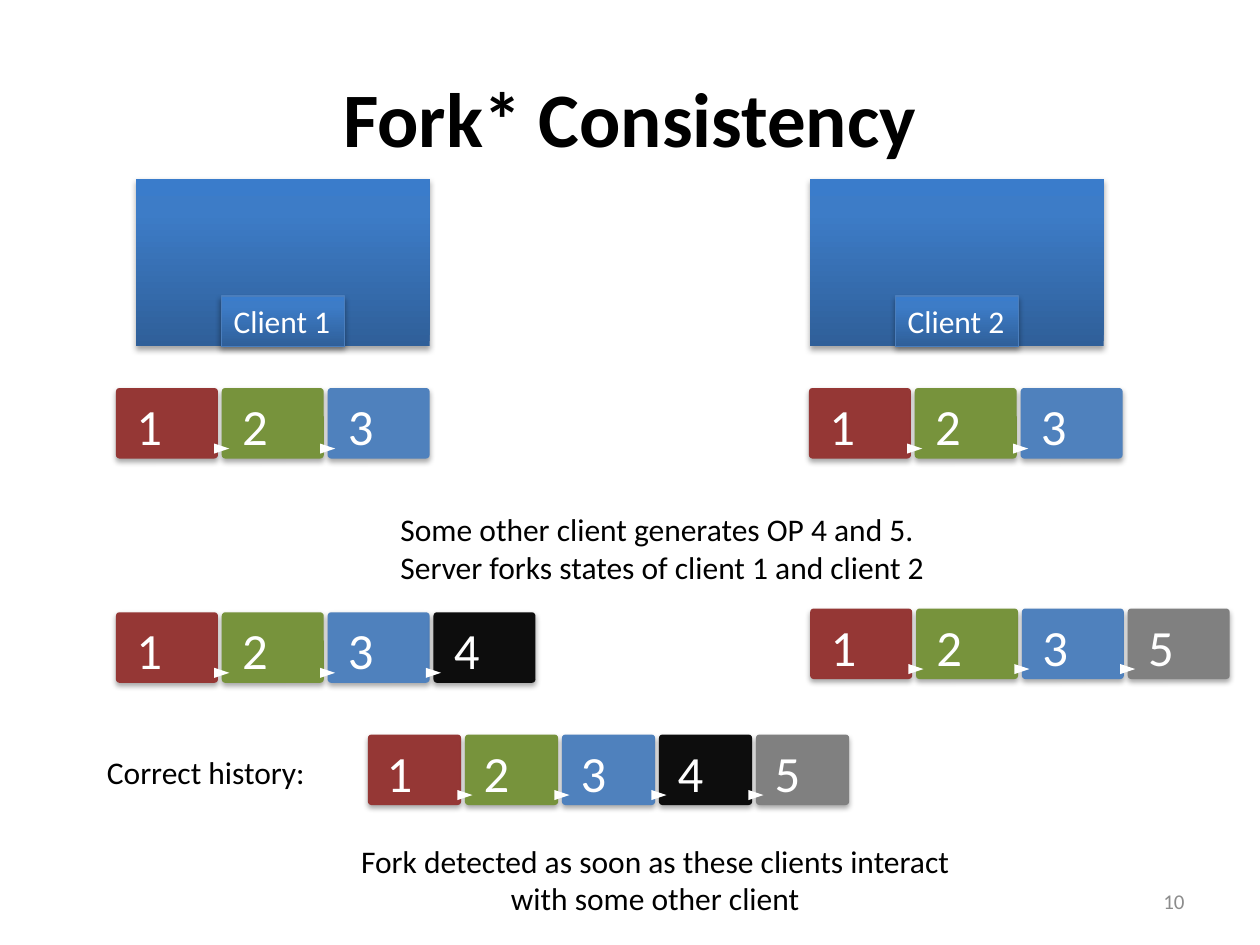
"""Build the Fork* Consistency slide with its operation histories."""
from copy import deepcopy
from dataclasses import dataclass

from lxml import etree
from pptx import Presentation
from pptx import util as u
from pptx.dml.color import RGBColor
from pptx.enum import shapes, text
from pptx.oxml.ns import qn


@dataclass(frozen=True)
class Theme:
    font: str = "Calibri"
    black: str = "000000"
    white: str = "FFFFFF"
    muted: str = "8C8C8C"
    outline: str = "4B7EBC"
    gradient: tuple = ((0, "2F5F99"), (0.8, "3D7CC7"), (1, "3A7CCB"))
    title_size: int = 44
    tile_size: int = 29
    body_size: int = 18
    number_size: int = 12


THEME = Theme()
LEFT, CENTER, RIGHT = text.PP_ALIGN.LEFT, text.PP_ALIGN.CENTER, text.PP_ALIGN.RIGHT
TITLE = "Fork* Consistency"
CLIENTS = [("Client 1", 1.08), ("Client 2", 6.43)]
OPERATION_COLORS = {"1": "953735", "2": "77933C", "3": "4F81BD", "4": "0D0D0D", "5": "808080"}
HISTORIES = [
    ("123", 0.92, 3.08, 0.81),
    ("123", 6.42, 3.08, 0.81),
    ("1234", 0.92, 4.86, 0.81),
    ("1235", 6.43, 4.83, 0.81),
    ("12345", 2.92, 5.83, 0.74),
]
NOTES = [
    (["Some other client generates OP 4 and 5.",
      "Server forks states of client 1 and client 2"], (3.08, 4, 4.41, 0.71), LEFT),
    (["Fork detected as soon as these clients interact",
      "with some other client"], (2.74, 6.63, 4.92, 0.71), CENTER),
    (["Correct history:"], (0.75, 5.93, 1.79, 0.4), LEFT),
]
SLIDE_NUMBER = "10"
CLIENT_TOP, CLIENT_WIDTH, CLIENT_HEIGHT = 1.42, 2.33, 1.33
LABEL_WIDTH, LABEL_HEIGHT = 0.98, 0.4
TILE_HEIGHT, TILE_GAP = 0.56, 0.03
ARROW_WIDTH, ARROW_HEIGHT = 0.08, 0.12


def inches(box):
    return [u.Inches(length) for length in box]


def write(shape, lines, size, color, align=LEFT, bold=False):
    frame = shape.text_frame
    for index, line in enumerate(lines):
        paragraph = frame.add_paragraph() if index else frame.paragraphs[0]
        paragraph.alignment = align
        run = paragraph.add_run()
        run.text = line
        run.font.name = THEME.font
        run.font.size = u.Pt(size)
        run.font.bold = bold
        run.font.color.rgb = RGBColor.from_string(color)
    return frame


def add_plain_shape(parent, kind, box, color=None):
    shape = parent.add_shape(kind, *inches(box))
    shape.line.fill.background()
    shape.shadow.inherit = False
    if color:
        shape.fill.solid()
        shape.fill.fore_color.rgb = RGBColor.from_string(color)
    return shape


def add_shadow(shape):
    effects = shape._element.spPr.find(qn("a:effectLst"))
    shadow = etree.SubElement(effects, qn("a:outerShdw"), blurRad="40000", dist="23000",
                              dir="5400000", rotWithShape="0")
    color = etree.SubElement(shadow, qn("a:srgbClr"), val=THEME.black)
    etree.SubElement(color, qn("a:alpha"), val="35000")


def add_gradient_box(parent, box):
    shape = add_plain_shape(parent, shapes.MSO_SHAPE.RECTANGLE, box)
    shape.fill.gradient()
    shape.fill.gradient_angle = 90
    stops = shape._element.spPr.find(".//" + qn("a:gsLst"))
    stops.append(deepcopy(stops[0]))
    for stop, (position, color) in zip(shape.fill.gradient_stops, THEME.gradient):
        stop.position = position
        stop.color.rgb = RGBColor.from_string(color)
    add_shadow(shape)
    return shape


def add_client(slide, name, left):
    group = slide.shapes.add_group_shape().shapes
    add_gradient_box(group, (left, CLIENT_TOP, CLIENT_WIDTH, CLIENT_HEIGHT))
    label_left = left + (CLIENT_WIDTH - LABEL_WIDTH) / 2
    label_top = CLIENT_TOP + CLIENT_HEIGHT - LABEL_HEIGHT
    label = add_gradient_box(group, (label_left, label_top, LABEL_WIDTH, LABEL_HEIGHT))
    label.line.color.rgb = RGBColor.from_string(THEME.outline)
    label.line.width = u.Pt(0.75)
    frame = write(label, [name], THEME.body_size, THEME.white)
    frame.word_wrap = False
    frame.vertical_anchor = text.MSO_ANCHOR.TOP


def add_history(slide, operations, left, top, width):
    group = slide.shapes.add_group_shape().shapes
    for index, operation in enumerate(operations):
        tile_left = left + index * (width + TILE_GAP)
        tile = add_plain_shape(group, shapes.MSO_SHAPE.ROUNDED_RECTANGLE,
                               (tile_left, top, width, TILE_HEIGHT), OPERATION_COLORS[operation])
        tile.adjustments[0] = 0.05
        add_shadow(tile)
        if index:
            arrow = add_plain_shape(group, shapes.MSO_SHAPE.FLOWCHART_EXTRACT,
                                    (tile_left - ARROW_WIDTH / 2, top + 0.75 * TILE_HEIGHT,
                                     ARROW_WIDTH, ARROW_HEIGHT), THEME.white)
            arrow.rotation = 90
        label = group.add_textbox(*inches((tile_left + 0.2 * width, top,
                                           0.75 * width, TILE_HEIGHT)))
        frame = write(label, [operation], THEME.tile_size, THEME.white)
        frame.word_wrap = True
        frame.margin_left = frame.margin_right = frame.margin_bottom = 0
        frame.margin_top = u.Inches(0.11)
        frame.paragraphs[0].line_spacing = 0.9


def main():
    presentation = Presentation()
    presentation.slide_width, presentation.slide_height = inches((10, 7.5))
    slide = presentation.slides.add_slide(presentation.slide_layouts[5])

    title = slide.shapes.title
    title.left, title.top, title.width, title.height = inches((0.5, 0.3, 9, 1.25))
    frame = write(title, [TITLE], THEME.title_size, THEME.black, CENTER, bold=True)
    frame.vertical_anchor = text.MSO_ANCHOR.MIDDLE

    for client in CLIENTS:
        add_client(slide, *client)
    for history in HISTORIES:
        add_history(slide, *history)
    for lines, box, align in NOTES:
        note = slide.shapes.add_textbox(*inches(box))
        write(note, lines, THEME.body_size, THEME.black, align).word_wrap = False

    number = slide.shapes.add_textbox(*inches((7.17, 6.95, 2.33, 0.4)))
    frame = write(number, [SLIDE_NUMBER], THEME.number_size, THEME.muted, RIGHT)
    frame.word_wrap = True
    frame.vertical_anchor = text.MSO_ANCHOR.MIDDLE
    presentation.save("out.pptx")


if __name__ == "__main__":
    main()
